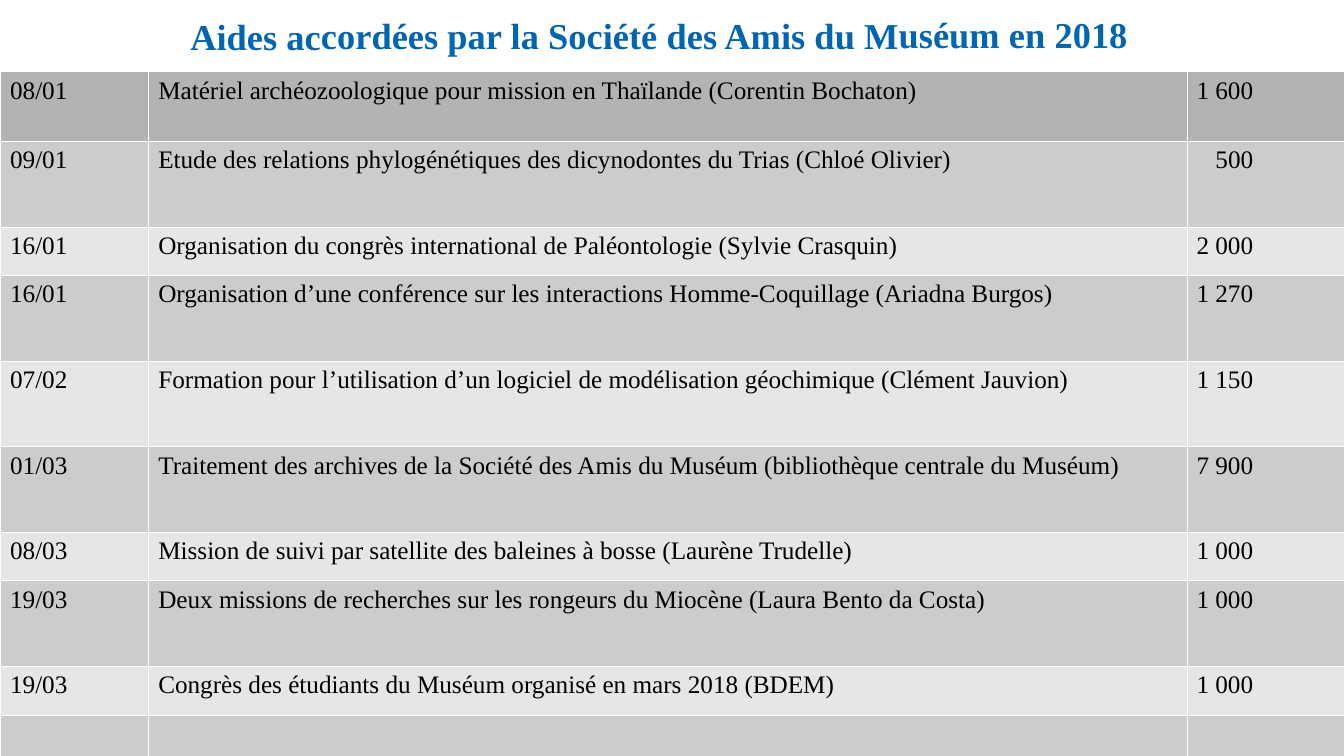
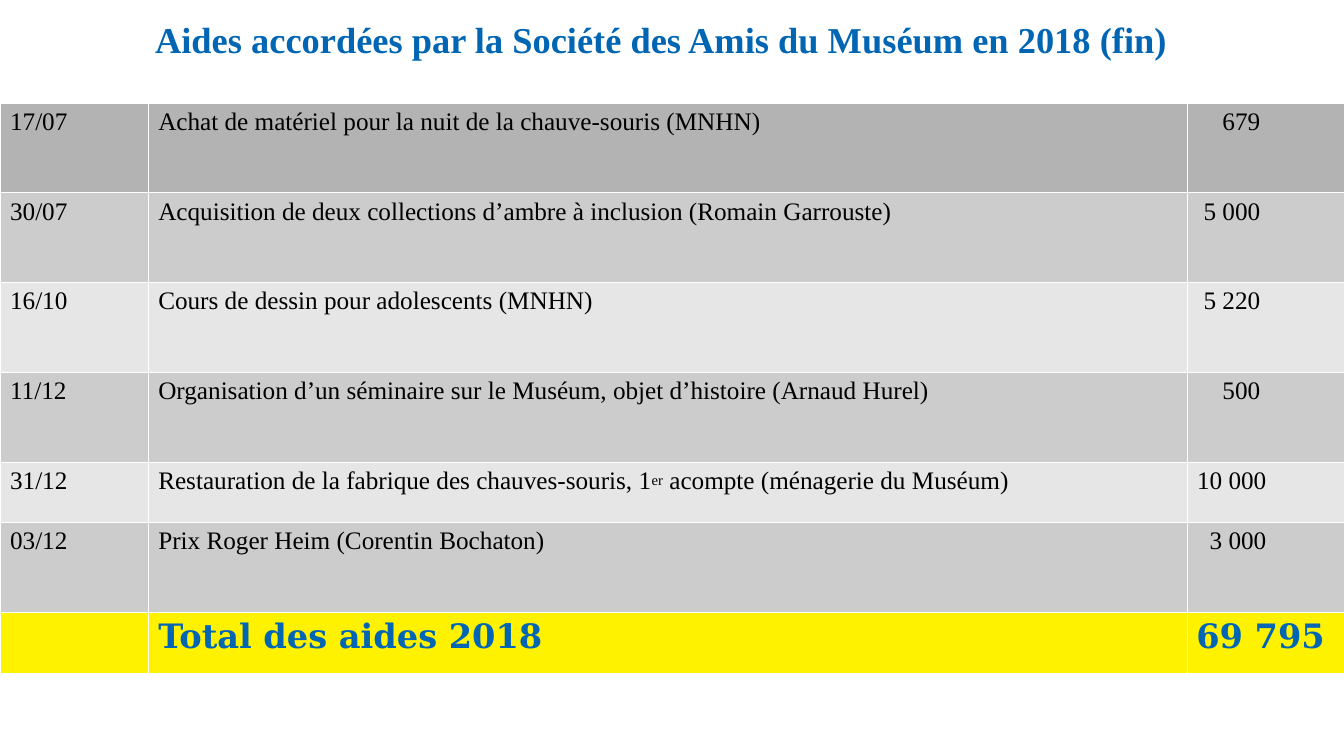
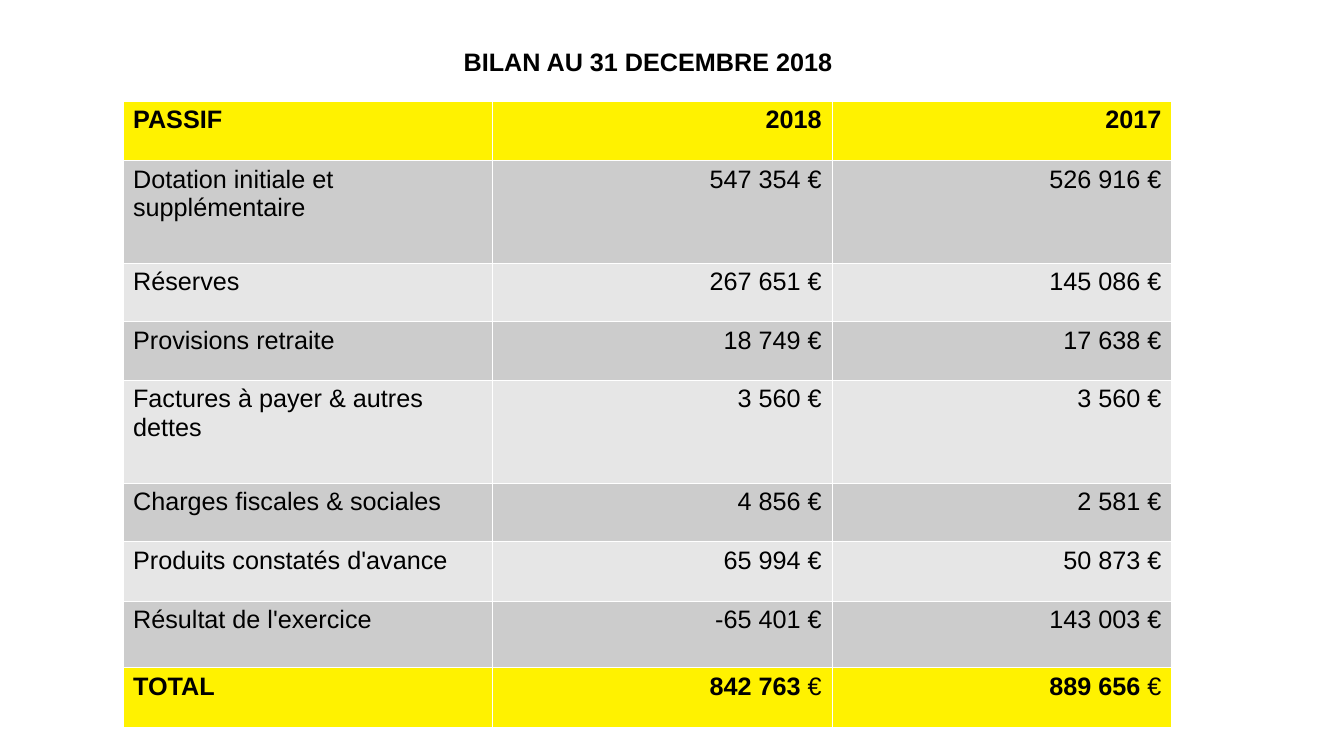
from pptx import Presentation
from pptx.dml.color import RGBColor
from pptx.enum.text import PP_ALIGN as Align
from pptx.oxml import parse_xml
from pptx.oxml.ns import nsdecls
from pptx.util import Inches, Pt

hue = RGBColor.from_string
BLUE, BLACK, YELLOW = "0066B3", "000000", "FFF200"
GREY, MID, PALE = "B3B3B3", "CCCCCC", "E6E6E6"
SERIF, SANS, BOLD = "Times New Roman", "Arial", "DejaVu Serif"


def say(frame, text, font=SERIF, size=18, color=BLACK, bold=False, align=Align.LEFT):
    para = frame.paragraphs[0]
    para.alignment = align
    parts = [(text, {})] if isinstance(text, str) else text
    for words, look in parts:
        if not words:
            continue
        run = para.add_run()
        run.text = words
        run.font.name = font
        run.font.size = Pt(size)
        run.font.bold = look.get("bold", bold)
        run.font.color.rgb = hue(color)
        if "raise" in look:
            run.font._element.set("baseline", str(look["raise"] * 1000))


def edge(cell):
    props = cell._tc.get_or_add_tcPr()
    for side in "LRTB":
        props.append(parse_xml(
            f'<a:ln{side} {nsdecls("a")} w="762"><a:solidFill>'
            f'<a:srgbClr val="FFFFFF"/></a:solidFill></a:ln{side}>'))


head = dict(font=SERIF, size=26, color=BLUE, bold=True)
strong = dict(font=SANS, bold=True)
plain = dict(font=SANS)
total = dict(font=BOLD, size=24, color=BLUE, bold=True)
euro = ("€", {"bold": False})

aids = [
    (0.69, 0.9, "08/01", "Matériel archéozoologique pour mission en Thaïlande (Corentin Bochaton)", "1 600"),
    (0.85, 0.9, "09/01", "Etude des relations phylogénétiques des dicynodontes du Trias (Chloé Olivier)", "500"),
    (0.48, 0.9, "16/01", "Organisation du congrès international de Paléontologie (Sylvie Crasquin)", "2 000"),
    (0.85, 0.9, "16/01", "Organisation d’une conférence sur les interactions Homme-Coquillage (Ariadna Burgos)", "1 270"),
    (0.85, 0.9, "07/02", "Formation pour l’utilisation d’un logiciel de modélisation géochimique (Clément Jauvion)", "1 150"),
    (0.85, 0.9, "01/03", "Traitement des archives de la Société des Amis du Muséum (bibliothèque centrale du Muséum)", "7 900"),
    (0.48, 0.9, "08/03", "Mission de suivi par satellite des baleines à bosse (Laurène Trudelle)", "1 000"),
    (0.85, 0.9, "19/03", "Deux missions de recherches sur les rongeurs du Miocène (Laura Bento da Costa)", "1 000"),
    (0.48, 0.9, "19/03", "Congrès des étudiants du Muséum organisé en mars 2018 (BDEM)", "1 000"),
    (0.48, 0.9, "", "", ""),
]
ends = [
    (0.89, 0.83, "17/07", "Achat de matériel pour la nuit de la chauve-souris (MNHN)", "679"),
    (0.89, 0.83, "30/07", "Acquisition de deux collections d’ambre à inclusion (Romain Garrouste)", "5 000"),
    (0.89, 0.83, "16/10", "Cours de dessin pour adolescents (MNHN)", "5 220"),
    (0.89, 0.83, "11/12", "Organisation d’un séminaire sur le Muséum, objet d’histoire (Arnaud Hurel)", "500"),
    (0.6, 0.77, "31/12", [("Restauration de la fabrique des chauves-souris, 1", {}), ("er", {"raise": 16}),
                          (" acompte (ménagerie du Muséum)", {})], "10 000"),
    (0.89, 0.77, "03/12", "Prix Roger Heim (Corentin Bochaton)", "3 000"),
    (0.61, 0.19, "", "Total des aides 2018", "69 795"),
]
debts = [
    (0.59, 0.1, "PASSIF", "2018", "2017"),
    (1.02, 0.1, "Dotation initiale et supplémentaire", "547 354 €", "526 916 €"),
    (0.58, 0.1, "Réserves", "267 651 €", "145 086 €"),
    (0.58, 0.1, "Provisions retraite", "18 749 €", "17 638 €"),
    (1.02, 0.1, "Factures à payer & autres dettes", "3 560 €", "3 560 €"),
    (0.58, 0.1, "Charges fiscales & sociales", "4 856 €", "2 581 €"),
    (0.59, 0.1, "Produits constatés d'avance", "65 994 €", "50 873 €"),
    (0.66, 0.1, "Résultat de l'exercice", "-65 401 €", "143 003 €"),
    (0.59, 0.1, "TOTAL", [("842 763 ", {}), euro], [("889 656 ", {}), euro]),
]

pages = [
    dict(title="Aides accordées par la Société des Amis du Muséum en 2018",
         box=(0, 0.08, 13.07, 0.7), turn=359.9, look=dict(head, align=Align.CENTER),
         left=0, top=0.71, cols=(1.47, 10.3, 1.56), rows=aids, sums=2,
         body={}, first=(GREY, {}), last=None),
    dict(title="Aides accordées par la Société des Amis du Muséum en 2018 (fin)",
         box=(1.44, 0.12, 10.35, 0.5), turn=0, look=head,
         left=0, top=1.02, cols=(1.47, 10.3, 1.56), rows=ends, sums=2,
         body={}, first=(GREY, {}), last=(YELLOW, total)),
    dict(title="BILAN AU 31 DECEMBRE 2018",
         box=(4.5, 0.41, 4.2, 0.4), turn=0, look=strong,
         left=1.22, top=1, cols=(3.66, 3.37, 3.37), rows=debts, sums=1,
         body=plain, first=(YELLOW, strong), last=(YELLOW, strong)),
]

deck = Presentation()
deck.slide_width, deck.slide_height = Inches(13.33), Inches(7.5)

for page in pages:
    slide = deck.slides.add_slide(deck.slide_layouts[6])
    rows, cols = page["rows"], page["cols"]
    table = slide.shapes.add_table(
        len(rows), len(cols), Inches(page["left"]), Inches(page["top"]),
        Inches(sum(cols)), Inches(sum(row[0] for row in rows))).table
    table.first_row = table.horz_banding = False
    for col, width in zip(table.columns, cols):
        col.width = Inches(width)
    for r, (height, pad, *texts) in enumerate(rows):
        table.rows[r].height = Inches(height)
        fill, look = (MID if r % 2 else PALE), page["body"]
        if r == 0:
            fill, look = page["first"]
        elif r == len(rows) - 1 and page["last"]:
            fill, look = page["last"]
        for c, text in enumerate(texts):
            cell = table.cell(r, c)
            edge(cell)
            cell.fill.solid()
            cell.fill.fore_color.rgb = hue(fill)
            align = Align.LEFT
            if c >= page["sums"]:
                align = Align.RIGHT
                cell.margin_left, cell.margin_right = Inches(0.05), Inches(pad)
            say(cell.text_frame, text, align=align, **look)
    box = slide.shapes.add_textbox(*map(Inches, page["box"]))
    box.rotation = page["turn"]
    box.text_frame.word_wrap = True
    say(box.text_frame, page["title"], **page["look"])

deck.save("out.pptx")
